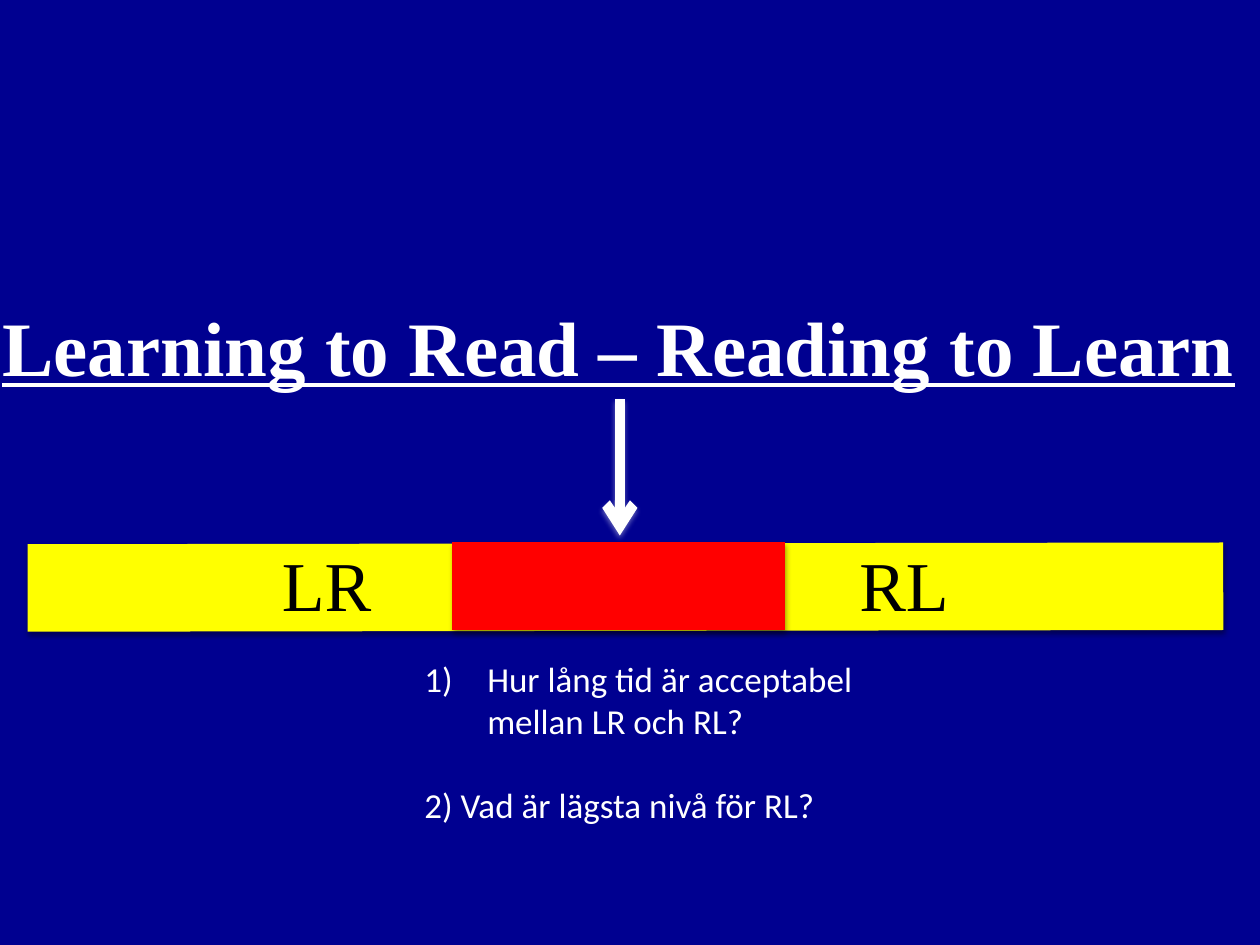
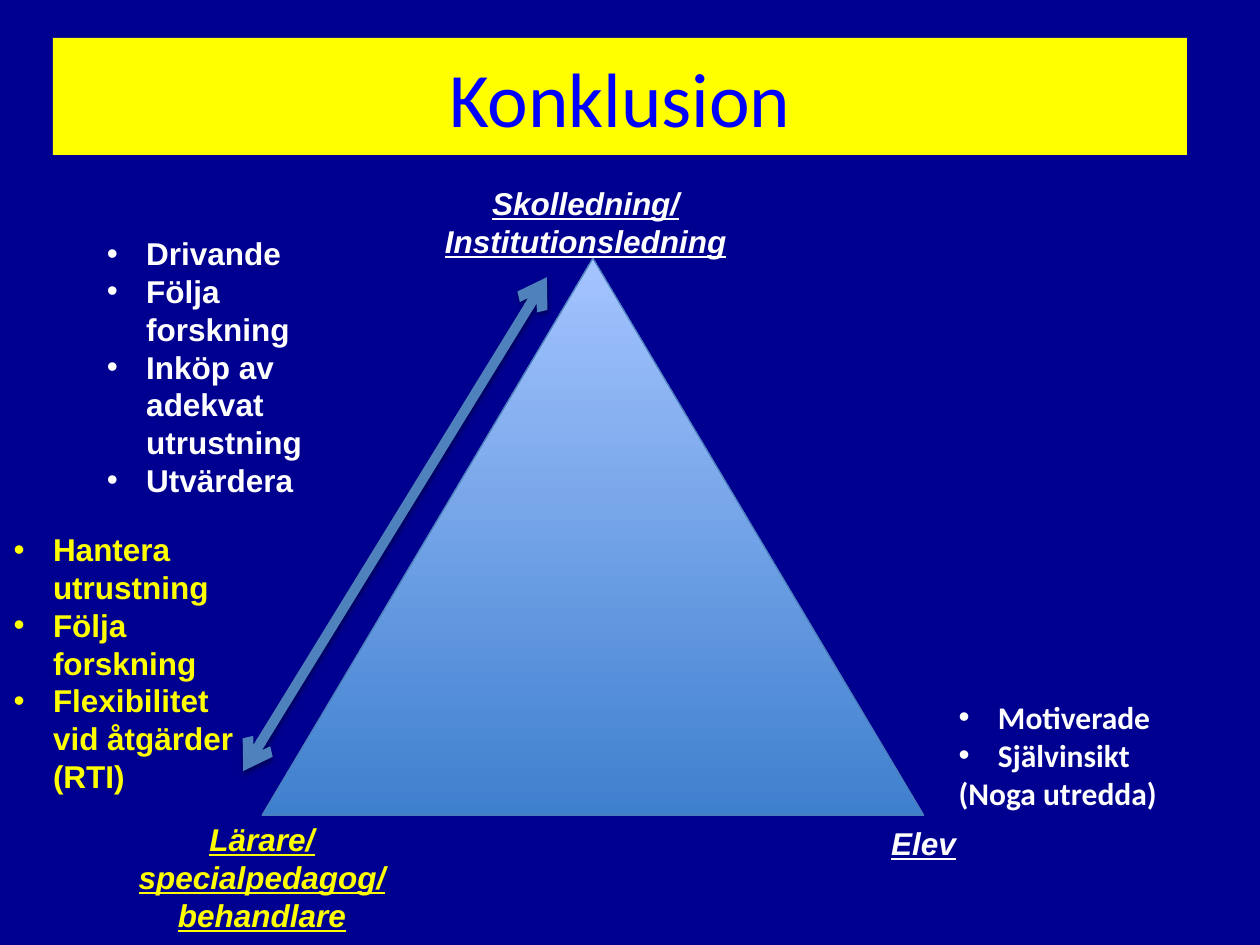
import pptx
import pptx.dml.color
import pptx.enum.dml
import pptx.enum.shapes
import pptx.enum.text
import pptx.oxml.ns
import pptx.util
from lxml import etree

Pt = pptx.util.Pt
qn = pptx.oxml.ns.qn
SHAPE = pptx.enum.shapes.MSO_SHAPE
ALIGN = pptx.enum.text.PP_ALIGN

NAVY, YELLOW, WHITE, BLACK = "000090", "FFFF00", "FFFFFF", "000000"
RED, BLUE, STEEL = "FF0000", "0000FF", "4F81BD"
SERIF, SANS, BODY = "Times New Roman", "Arial", "Calibri"


def color(hex_value):
    return pptx.dml.color.RGBColor.from_string(hex_value)


def child(parent, tag, **attrs):
    return etree.SubElement(parent, qn(tag), attrs)


class Deck:
    def __init__(self, prs):
        self.prs = prs
        self.slide = None

    def new_slide(self):
        self.slide = self.prs.slides.add_slide(self.prs.slide_layouts[6])
        fill = self.slide.background.fill
        fill.solid()
        fill.fore_color.rgb = color(NAVY)

    def shape(self, kind, x, y, w, h):
        sp = self.slide.shapes.add_shape(kind, Pt(x), Pt(y), Pt(w), Pt(h))
        sp.shadow.inherit = False
        return sp

    def fill_text(self, tf, lines, size, font, ink, align=ALIGN.LEFT, **style):
        """Fill a text frame, one paragraph per line."""
        tf.word_wrap = True
        tf.text = "\n".join(lines)
        for p in tf.paragraphs:
            p.alignment = align
            for r in p.runs:
                r.font.size = Pt(size)
                r.font.name = font
                r.font.color.rgb = color(ink)
                for name, value in style.items():
                    setattr(r.font, name, value)

    def text(self, x, y, w, h, lines, size, font, ink, **style):
        sp = self.slide.shapes.add_textbox(Pt(x), Pt(y), Pt(w), Pt(h))
        self.fill_text(sp.text_frame, lines, size, font, ink, **style)
        return sp.text_frame.paragraphs

    def bullet(self, p, indent, tag="a:buChar", **attrs):
        pPr = p._p.get_or_add_pPr()
        pPr.set("marL", str(Pt(indent)))
        pPr.set("indent", str(-Pt(indent)))
        child(pPr, "a:buFont", typeface=SANS)
        child(pPr, tag, **attrs)

    def bullets(self, x, y, w, h, lines, font, ink, closing=()):
        """Bold bullet list, with optional plain closing lines."""
        ps = self.text(x, y, w, h, [*lines, *closing], 18, font, ink, bold=True)
        for p in ps[:len(lines)]:
            self.bullet(p, 22.5, char="•")

    def corner(self, x, y, h, label, ink):
        self.text(x, y, 191.5, h, [label], 18, SANS, ink, align=ALIGN.CENTER,
                  bold=True, italic=True, underline=True)

    def title(self, label):
        sp = self.shape(SHAPE.RECTANGLE, 30.3, 21.6, 648, 67)
        sp.fill.solid()
        sp.fill.fore_color.rgb = color(YELLOW)
        sp.line.fill.background()
        sp.text_frame.vertical_anchor = pptx.enum.text.MSO_ANCHOR.MIDDLE
        self.fill_text(sp.text_frame, [label], 44, BODY, BLUE, align=ALIGN.CENTER)

    def triangle(self, x, y, w, h, bottom, top, outline):
        sp = self.shape(SHAPE.ISOSCELES_TRIANGLE, x, y, w, h)
        sp.fill.gradient()
        sp.fill.gradient_angle = 90
        for stop, hex_value, position in zip(sp.fill.gradient_stops, (bottom, top), (0, 1)):
            stop.color.rgb = color(hex_value)
            stop.position = position
        sp.line.color.rgb = color(outline)
        sp.line.width = Pt(0.75)

    def line(self, x1, y1, x2, y2, ink, width, arrows=(), shadow=BLACK):
        cx = self.slide.shapes.add_connector(
            pptx.enum.shapes.MSO_CONNECTOR.STRAIGHT, Pt(x1), Pt(y1), Pt(x2), Pt(y2))
        cx.line.color.rgb = color(ink)
        cx.line.width = Pt(width)
        spPr = cx._element.spPr
        for end in arrows:
            child(spPr.find(qn("a:ln")), end, type="arrow")
        # Soft shadow straight below the line
        effects = child(spPr, "a:effectLst")
        outer = child(effects, "a:outerShdw", blurRad=str(Pt(3.1)), dist=str(Pt(1.6)),
                      dir="5400000", rotWithShape="0")
        child(child(outer, "a:srgbClr", val=shadow), "a:alpha", val="38000")


def reading_slide(deck):
    deck.new_slide()
    deck.text(-5.76, 167.8, 763, 60.5, ["Learning to Read – Reading to Learn"],
              44, SERIF, WHITE, bold=True, underline=True)

    # Time bar from LR to RL with the gap in red
    deck.line(15.8, 336, 699, 335, YELLOW, 50)
    deck.line(258.5, 335, 448.5, 335, RED, 50)
    for x, w, label in ((154, 104.4, "LR"), (484, 152.6, "RL")):
        deck.text(x, 306, w, 55.4, [label], 40, SERIF, BLACK)
    deck.line(354.2, 228.2, 354.2, 306, WHITE, 5.75, ["a:tailEnd"], shadow=WHITE)

    # Questions
    first, second = deck.text(
        235.4, 372.2, 280.8, 104.4,
        ["Hur lång tid är acceptabel mellan LR och RL?", "2) Vad är lägsta nivå för RL?"],
        20, BODY, WHITE)
    deck.bullet(first, 36, "a:buAutoNum", type="arabicParenR")
    second.space_before = Pt(24)


def conclusion_slide(deck):
    deck.new_slide()
    deck.title("Konklusion")

    # Triangle with its three corners
    deck.triangle(149.8, 147.6, 378, 318.2, "3F80CE", "A4C4FF", "4B7EBC")
    deck.corner(239, 101.5, 51, "Skolledning/Institutionsledning", WHITE)
    deck.corner(54, 465.1, 72.7, "Lärare/specialpedagog/behandlare", YELLOW)
    deck.corner(432, 467.3, 29, "Elev", WHITE)
    deck.line(312.5, 158.4, 139, 440.6, STEEL, 5.75, ["a:headEnd", "a:tailEnd"])

    # What each corner contributes
    deck.bullets(54, 130.3, 165.6, 160, ["Drivande", "Följa forskning",
                 "Inköp av adekvat utrustning", "Utvärdera"], SANS, WHITE)
    deck.bullets(0.7, 299.5, 144.7, 160, ["Hantera utrustning", "Följa forskning",
                 "Flexibilitet vid åtgärder (RTI)"], SANS, YELLOW)
    deck.bullets(540.7, 395.3, 165.6, 72.7, ["Motiverade", "Självinsikt"],
                 BODY, WHITE, closing=["(Noga utredda)"])


def main():
    prs = pptx.Presentation()
    prs.slide_width, prs.slide_height = Pt(720), Pt(540)
    deck = Deck(prs)
    reading_slide(deck)
    conclusion_slide(deck)
    prs.save("out.pptx")


if __name__ == "__main__":
    main()
